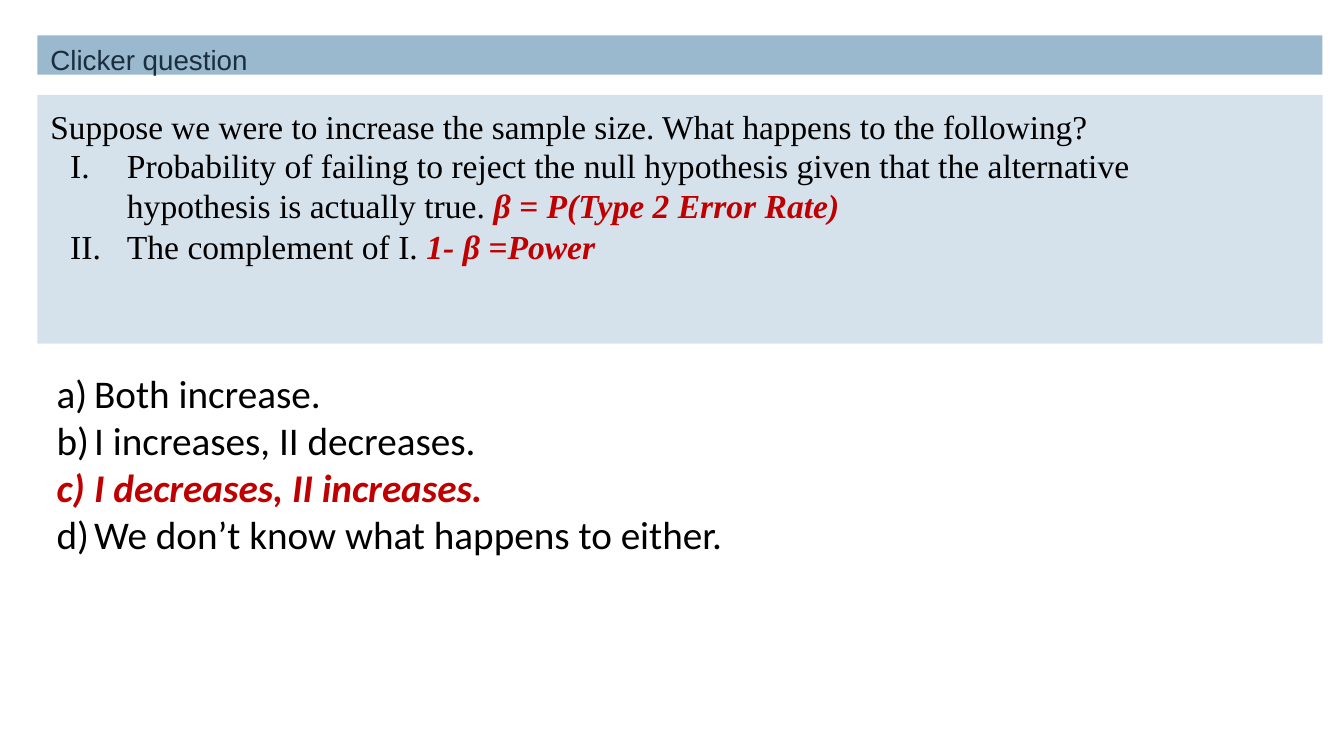
from dataclasses import dataclass

from lxml.etree import SubElement
from pptx import Presentation
from pptx.dml.color import RGBColor
from pptx.enum.shapes import MSO_SHAPE
from pptx.enum.text import MSO_ANCHOR, MSO_AUTO_SIZE, PP_ALIGN
from pptx.oxml.ns import qn
from pptx.util import Cm, Pt


@dataclass(frozen=True)
class Theme:
    bar: RGBColor = RGBColor(0x9A, 0xB8, 0xCE)
    panel: RGBColor = RGBColor(0xD6, 0xE2, 0xEB)
    heading: RGBColor = RGBColor(0x1A, 0x2E, 0x3D)
    text: RGBColor = RGBColor(0x00, 0x00, 0x00)
    answer: RGBColor = RGBColor(0xC0, 0x00, 0x00)
    heading_font: str = "Arial"
    question_font: str = "Times New Roman"
    choice_font: str = "Calibri"
    heading_size: Pt = Pt(19.8)
    question_size: Pt = Pt(23.8)
    item_size: Pt = Pt(24)
    choice_size: Pt = Pt(28)


THEME = Theme()
BAND_LEFT, BAND_WIDTH = Cm(0.94), Cm(32.39)

QUESTION = ("Suppose we were to increase the sample size. "
            "What happens to the following?")
ITEMS = [
    ("Probability of failing to reject the null hypothesis given that the "
     "alternative hypothesis is actually true. ", "β = P(Type 2 Error Rate)"),
    ("The complement of I. ", "1- β =Power"),
]
CHOICES = [
    "Both increase.",
    "I increases, II decreases.",
    "I decreases, II increases.",
    "We don’t know what happens to either.",
]
CORRECT = CHOICES[2]


def place(shape, left, top, width, height):
    shape.left, shape.top, shape.width, shape.height = left, top, width, height


def style(font, name, size, color):
    font.name, font.size, font.color.rgb = name, size, color


def emphasize(font):
    font.bold = font.italic = True
    font.color.rgb = THEME.answer


def number(paragraph, scheme, indent):
    """Give the paragraph an automatic number and a hanging indent."""
    properties = paragraph._p.get_or_add_pPr()
    properties.set("marL", str(indent))
    properties.set("indent", str(-indent))
    numbering = SubElement(properties, qn("a:buAutoNum"))
    numbering.set("type", scheme)


def list_paragraphs(frame, count, scheme, indent):
    """Yield numbered paragraphs, starting with the frame's own first one."""
    frame.word_wrap = True
    frame.auto_size = MSO_AUTO_SIZE.NONE
    for index in range(count):
        paragraph = frame.paragraphs[0] if index == 0 else frame.add_paragraph()
        paragraph.space_before = Pt(0)
        number(paragraph, scheme, indent)
        yield paragraph


def fill_band(band, text, fill, inset_top, font_name, size, color):
    """Write one line at the top left of a filled full-width band."""
    band.fill.solid()
    band.fill.fore_color.rgb = fill
    band.line.fill.background()
    frame = band.text_frame
    frame.word_wrap = True
    frame.auto_size = MSO_AUTO_SIZE.NONE
    frame.vertical_anchor = MSO_ANCHOR.TOP
    frame.margin_left, frame.margin_top = Cm(0.33), inset_top
    frame.margin_right = frame.margin_bottom = Cm(0)
    frame.text = text
    paragraph = frame.paragraphs[0]
    paragraph.alignment = PP_ALIGN.LEFT
    style(paragraph.font, font_name, size, color)


def add_heading(slide):
    bar = slide.shapes.add_shape(MSO_SHAPE.RECTANGLE, BAND_LEFT, Cm(0.89),
                                 BAND_WIDTH, Cm(0.99))
    bar.shadow.inherit = False
    fill_band(bar, "Clicker question", THEME.bar, Cm(0.19),
              THEME.heading_font, THEME.heading_size, THEME.heading)


def set_question(title):
    place(title, BAND_LEFT, Cm(2.39), BAND_WIDTH, Cm(6.27))
    fill_band(title, QUESTION, THEME.panel, Cm(0.29),
              THEME.question_font, THEME.question_size, THEME.text)


def add_items(slide):
    box = slide.shapes.add_textbox(Cm(1.52), Cm(3.53), Cm(29.11), Cm(3.33))
    paragraphs = list_paragraphs(box.text_frame, len(ITEMS),
                                 "romanUcPeriod", Cm(1.43))
    for paragraph, (statement, meaning) in zip(paragraphs, ITEMS):
        style(paragraph.font, THEME.question_font, THEME.item_size, THEME.text)
        paragraph.add_run().text = statement
        solution = paragraph.add_run()
        solution.text = meaning
        emphasize(solution.font)


def set_choices(body):
    place(body, Cm(1.17), Cm(9.17), Cm(29.69), Cm(6.25))
    paragraphs = list_paragraphs(body.text_frame, len(CHOICES),
                                 "alphaLcParenR", Cm(0.95))
    for paragraph, choice in zip(paragraphs, CHOICES):
        paragraph.add_run().text = choice
        style(paragraph.font, THEME.choice_font, THEME.choice_size, THEME.text)
        if choice == CORRECT:
            emphasize(paragraph.font)


def main():
    deck = Presentation()
    deck.slide_width, deck.slide_height = Cm(33.87), Cm(19.05)
    slide = deck.slides.add_slide(deck.slide_layouts.get_by_name("Title and Content"))
    add_heading(slide)
    set_question(slide.shapes.title)
    set_choices(slide.placeholders[1])
    add_items(slide)
    deck.save("out.pptx")


if __name__ == "__main__":
    main()
